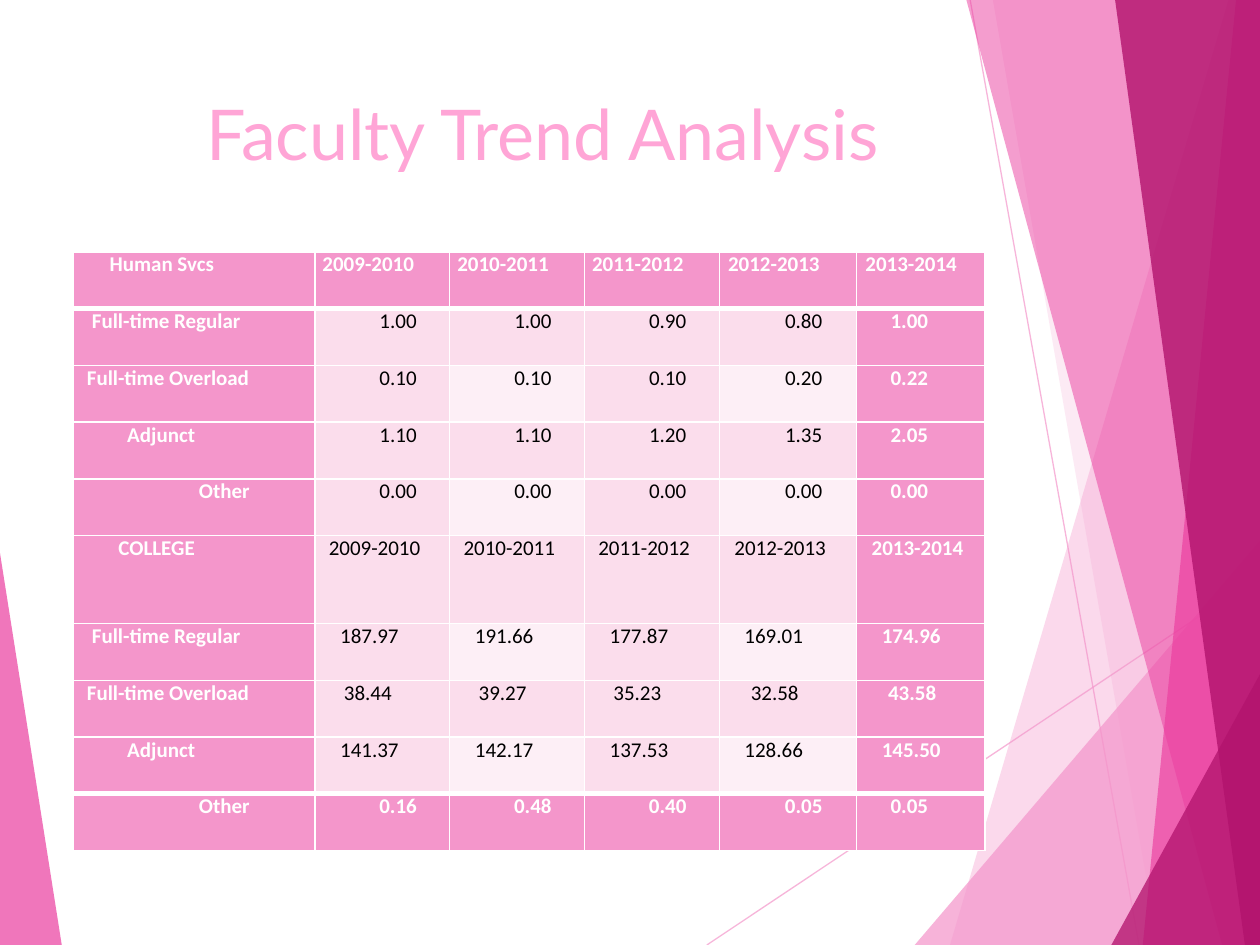
import lxml.etree
import pptx
import pptx.dml.color
import pptx.enum.shapes
import pptx.enum.text
import pptx.oxml.ns
import pptx.util

Inches = pptx.util.Inches
Pt = pptx.util.Pt
LEFT = pptx.enum.text.PP_ALIGN.LEFT
CENTER = pptx.enum.text.PP_ALIGN.CENTER

TITLE = "Faculty Trend Analysis"
YEARS = ["2009-2010", "2010-2011", "2011-2012", "2012-2013", "2013-2014"]
FACULTY = [
    ["Human Svcs", *YEARS],
    ["Full-time Regular", "1.00", "1.00", "0.90", "0.80", "1.00"],
    ["Full-time Overload", "0.10", "0.10", "0.10", "0.20", "0.22"],
    ["Adjunct", "1.10", "1.10", "1.20", "1.35", "2.05"],
    ["Other", "0.00", "0.00", "0.00", "0.00", "0.00"],
    ["COLLEGE", *YEARS],
    ["Full-time Regular", "187.97", "191.66", "177.87", "169.01", "174.96"],
    ["Full-time Overload", "38.44", "39.27", "35.23", "32.58", "43.58"],
    ["Adjunct", "141.37", "142.17", "137.53", "128.66", "145.50"],
    ["Other", "0.16", "0.48", "0.40", "0.05", "0.05"],
]
LABEL_INDENTS = {
    "Human Svcs": 0.29, "Full-time Regular": 0.15, "Full-time Overload": 0.11,
    "Adjunct": 0.43, "Other": 0.48, "COLLEGE": 0.36,
}
LEFT_ROW_INDENTS = {0: (0.06, 0.07), 5: (0.11, 0.12), 6: (0.2, 0.2), 7: (0.23, 0.25), 8: (0.2, 0.2)}
COLUMN_WIDTHS = [1.92, 1.07, 1.07, 1.07, 1.09, 1.02]
ROW_HEIGHT, COLLEGE_HEIGHT, COLLEGE_ROW = 0.45, 0.7, 5

THEME = {
    "pink": "F496CB", "magenta": "EB3D9F", "plum": "B2136D", "title": "FFA5D6",
    "tint": "FBDDEC", "pale": "FDEFF6", "white": "FFFFFF", "black": "000000",
    "title_font": "Lato", "table_font": "Calibri", "title_size": 40, "table_size": 12,
    "thin": 1, "thick": 3, "ray": 0.75,
}
RAYS = [((5.61, 7.5), (10, 4.57)), ((7.7, 0), (9.04, 7.5))]
FACETS = [
    ("pink", 36, [(9.75, 0), (7.54, 7.5), (10, 7.5), (10, 0)]),
    ("pink", 20, [(7.88, 0), (9.19, 7.5), (10, 7.5), (10, 0)]),
    ("pink", 72, [(7.26, 7.5), (10, 4.29), (10, 7.5)]),
    ("magenta", 50, [(7.67, 0), (9.7, 7.5), (10, 7.5), (10, 0)]),
    ("magenta", 66, [(9.81, 0), (9.07, 7.5), (10, 7.5), (10, 0)]),
    ("plum", 80, [(8.85, 0), (9.88, 7.5), (10, 7.5), (10, 0)]),
    ("plum", 76, [(8.82, 7.5), (10, 5.35), (10, 7.5)]),
    ("magenta", 70, [(0, 4.39), (0.49, 7.5), (0, 7.5)]),
]


def color(name):
    return pptx.dml.color.RGBColor.from_string(THEME[name])


def add_xml(parent, tag, **attributes):
    values = {key: str(value) for key, value in attributes.items()}
    return lxml.etree.SubElement(parent, pptx.oxml.ns.qn(tag), values)


def set_opacity(shape, percent):
    for fill_color in shape.element.spPr.iter(pptx.oxml.ns.qn("a:srgbClr")):
        add_xml(fill_color, "a:alpha", val=percent * 1000)


def write_text(frame, text, *, font, size, ink, bold=False, align=LEFT, indent=0, before=0):
    paragraph = frame.paragraphs[0]
    paragraph.alignment = align
    paragraph.space_before = Pt(before)
    properties = paragraph._p.get_or_add_pPr()
    properties.set("marL", str(Inches(indent)))
    properties.set("indent", "0")
    run = paragraph.add_run()
    run.text = text
    run.font.name = font
    run.font.size = Pt(size)
    run.font.bold = bold
    run.font.color.rgb = color(ink)


def add_ray(slide, start, end):
    ray = slide.shapes.add_connector(
        pptx.enum.shapes.MSO_CONNECTOR.STRAIGHT, *map(Inches, start + end))
    ray.line.color.rgb = color("pink")
    ray.line.width = Pt(THEME["ray"])
    set_opacity(ray, 70)
    add_xml(ray.element.spPr, "a:effectLst")


def add_facet(slide, fill, opacity, corners):
    points = [(Inches(x), Inches(y)) for x, y in corners]
    outline = slide.shapes.build_freeform(*points[0])
    outline.add_line_segments(points[1:], close=True)
    facet = outline.convert_to_shape()
    facet.shadow.inherit = False
    facet.fill.solid()
    facet.fill.fore_color.rgb = color(fill)
    facet.line.fill.background()
    set_opacity(facet, opacity)


def set_borders(cell, top, bottom):
    properties = cell._tc.get_or_add_tcPr()
    widths = {"a:lnL": "thin", "a:lnR": "thin", "a:lnT": top, "a:lnB": bottom}
    for tag, weight in widths.items():
        border = add_xml(properties, tag, w=Pt(THEME[weight]))
        add_xml(add_xml(border, "a:solidFill"), "a:srgbClr", val=THEME["white"])


def place_text(row, column, text):
    if column == 0:
        return (CENTER if text == "Other" else LEFT), LABEL_INDENTS[text]
    if row in LEFT_ROW_INDENTS:
        return LEFT, LEFT_ROW_INDENTS[row][column >= 4]
    return (LEFT, 0.27) if column == 5 else (CENTER, 0.25)


def add_faculty_table(slide):
    last_row, last_column = len(FACULTY) - 1, len(COLUMN_WIDTHS) - 1
    heights = [COLLEGE_HEIGHT if row == COLLEGE_ROW else ROW_HEIGHT for row in range(len(FACULTY))]
    faculty = slide.shapes.add_table(
        len(FACULTY), len(COLUMN_WIDTHS), Inches(0.58), Inches(2),
        Inches(sum(COLUMN_WIDTHS)), Inches(sum(heights))).table
    faculty.first_row = faculty.horz_banding = False
    for column, width in zip(faculty.columns, COLUMN_WIDTHS):
        column.width = Inches(width)
    for row, height in zip(faculty.rows, heights):
        row.height = Inches(height)
    for row, texts in enumerate(FACULTY):
        for column, text in enumerate(texts):
            cell = faculty.cell(row, column)
            cell.margin_left = cell.margin_right = cell.margin_top = cell.margin_bottom = 0
            set_borders(cell, "thick" if row in (1, last_row) else "thin",
                        "thick" if row in (0, last_row - 1) else "thin")
            accent = row in (0, last_row) or column in (0, last_column)
            band = "pale" if row % 2 == 0 and column % 2 == 0 else "tint"
            cell.fill.solid()
            cell.fill.fore_color.rgb = color("pink" if accent else band)
            align, indent = place_text(row, column, text)
            write_text(cell.text_frame, text, font=THEME["table_font"], size=THEME["table_size"],
                       ink="white" if accent else "black", bold=accent,
                       align=align, indent=indent, before=1.8)


def add_title(slide):
    title = slide.shapes.title
    title.left, title.top, title.width, title.height = map(Inches, (0.67, 0.67, 6.94, 1.44))
    title.text_frame.auto_size = pptx.enum.text.MSO_AUTO_SIZE.NONE
    title.text_frame.vertical_anchor = pptx.enum.text.MSO_ANCHOR.TOP
    write_text(title.text_frame, TITLE, font=THEME["title_font"], size=THEME["title_size"],
               ink="title", indent=0.87)
    slide.shapes.element.append(title.element)


def main():
    deck = pptx.Presentation()
    deck.slide_width, deck.slide_height = Inches(10), Inches(7.5)
    slide = deck.slides.add_slide(deck.slide_layouts[5])
    for start, end in RAYS:
        add_ray(slide, start, end)
    for fill, opacity, corners in FACETS:
        add_facet(slide, fill, opacity, corners)
    add_title(slide)
    add_faculty_table(slide)
    deck.save("out.pptx")


if __name__ == "__main__":
    main()
